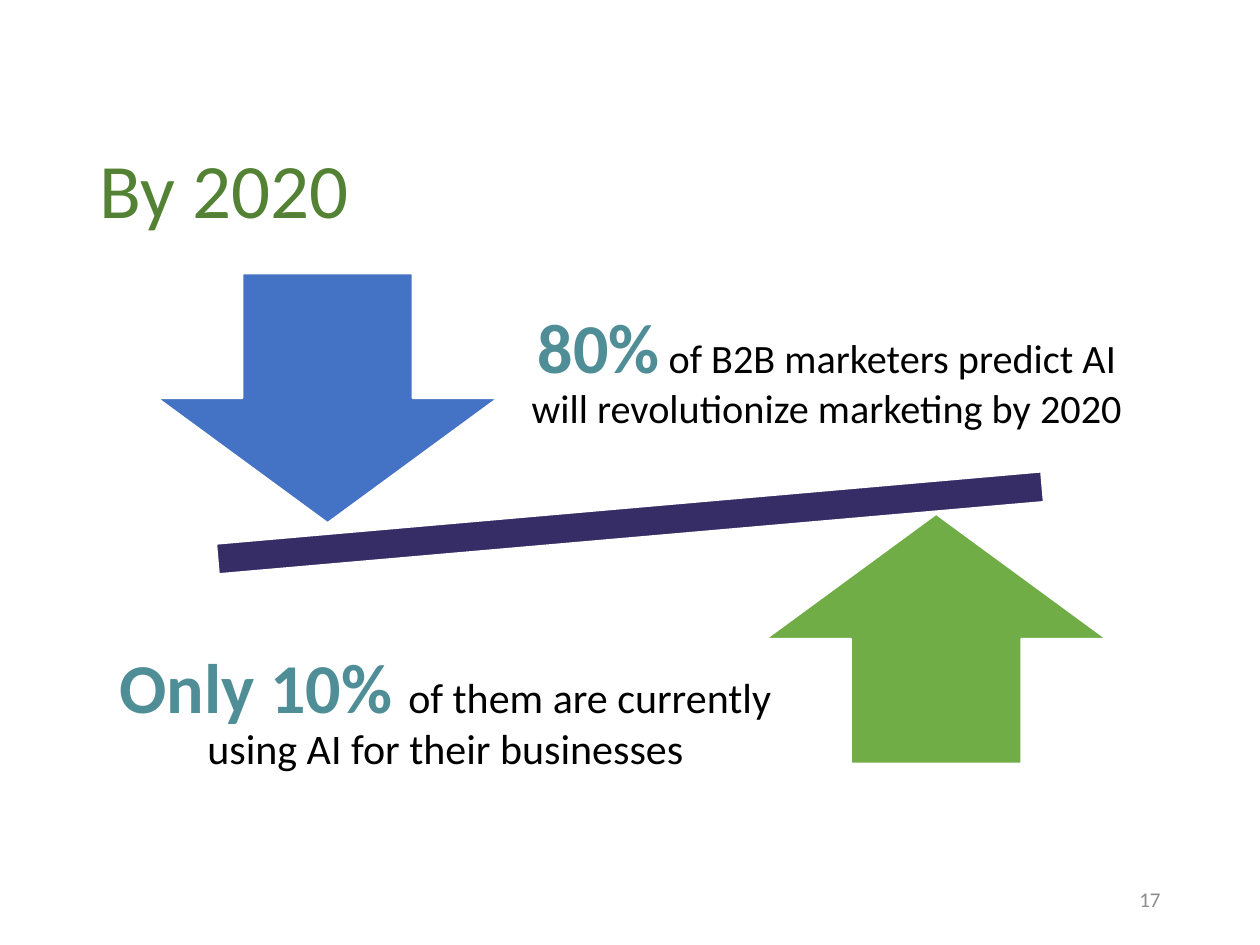
"""Build a slide that weighs two AI marketing figures on a tilted beam."""
from pptx import Presentation, util as u
from pptx.dml.color import RGBColor
from pptx.enum import shapes, text

HUES = {"title": "548235", "beam": "362D66", "down": "4472C4", "up": "70AD47",
        "stat": "4F8D97", "body": "000000", "page": "8C8C8C", "edge": "FFFFFF"}
ALIGN = text.PP_ALIGN
ANCHOR = text.MSO_ANCHOR
KIND = shapes.MSO_SHAPE


def write(para, words, size=24, hue="body", bold=False):
    """Add a formatted run to a paragraph."""
    run = para.add_run()
    run.text = words
    font = run.font
    font.name, font.size, font.bold = "Calibri", u.Pt(size), bold
    font.color.rgb = RGBColor.from_string(HUES[hue])


class Deck:
    """Hold the style and the current slide."""

    def __init__(self):
        """Open a blank deck with one titled slide."""
        self.file = Presentation()
        self.file.slide_width, self.file.slide_height = u.Inches(10), u.Inches(7.5)
        self.slide = self.file.slides.add_slide(self.file.slide_layouts[5])

    def frame(self, shape, align, anchor, inset=None):
        """Set up a text frame and return its first paragraph."""
        body = shape.text_frame
        body.word_wrap = True
        body.auto_size = text.MSO_AUTO_SIZE.NONE
        body.vertical_anchor = anchor
        if inset is not None:
            body.margin_left = body.margin_right = u.Inches(inset)
            body.margin_top = body.margin_bottom = u.Inches(inset)
        para = body.paragraphs[0]
        para.alignment = align
        para.line_spacing = 0.9
        return para

    def title(self, words, *box):
        """Place and fill the title."""
        shape = self.slide.shapes.title
        shape.left, shape.top, shape.width, shape.height = map(u.Inches, box)
        write(self.frame(shape, ALIGN.LEFT, ANCHOR.BOTTOM), words, size=44, hue="title")

    def shape(self, kind, hue, *box, turn=0):
        """Add a filled shape with a thin edge."""
        shape = self.slide.shapes.add_shape(kind, *map(u.Inches, box))
        shape.shadow.inherit = False
        shape.rotation = turn
        shape.fill.solid()
        shape.fill.fore_color.rgb = RGBColor.from_string(HUES[hue])
        shape.line.color.rgb = RGBColor.from_string(HUES["edge"])
        shape.line.width = u.Pt(1)

    def label(self, *box, align=ALIGN.CENTER, inset=None):
        """Add a text box and return its paragraph."""
        shape = self.slide.shapes.add_textbox(*map(u.Inches, box))
        return self.frame(shape, align, ANCHOR.MIDDLE, inset)

    def claim(self, stat, words, *box, size=24):
        """Add a bold figure followed by plain words."""
        para = self.label(*box, inset=0.31)
        write(para, stat, size=40, hue="stat", bold=True)
        write(para, words, size=size)


def main():
    """Draw the slide and save it."""
    deck = Deck()
    deck.title("By 2020", 0.69, 0.47, 8.62, 1.45)
    deck.shape(KIND.MATH_MINUS, "beam", 0.53, 3.64, 8.94, 1.02, turn=355)
    deck.shape(KIND.DOWN_ARROW, "down", 1.25, 2.17, 2.7, 1.98)
    deck.claim("80%", " of B2B marketers predict AI will revolutionize marketing by 2020",
               3.79, 1.92, 5.55, 2.08, size=23)
    deck.shape(KIND.UP_ARROW, "up", 6.08, 4.08, 2.7, 1.98)
    deck.claim("Only 10% ", "of them are currently using AI for their businesses",
               0.49, 4.62, 6.09, 2.08)
    page = deck.label(7.06, 6.95, 2.25, 0.4, align=ALIGN.RIGHT)
    write(page, "17", size=12, hue="page")
    deck.file.save("out.pptx")


if __name__ == "__main__":
    main()
